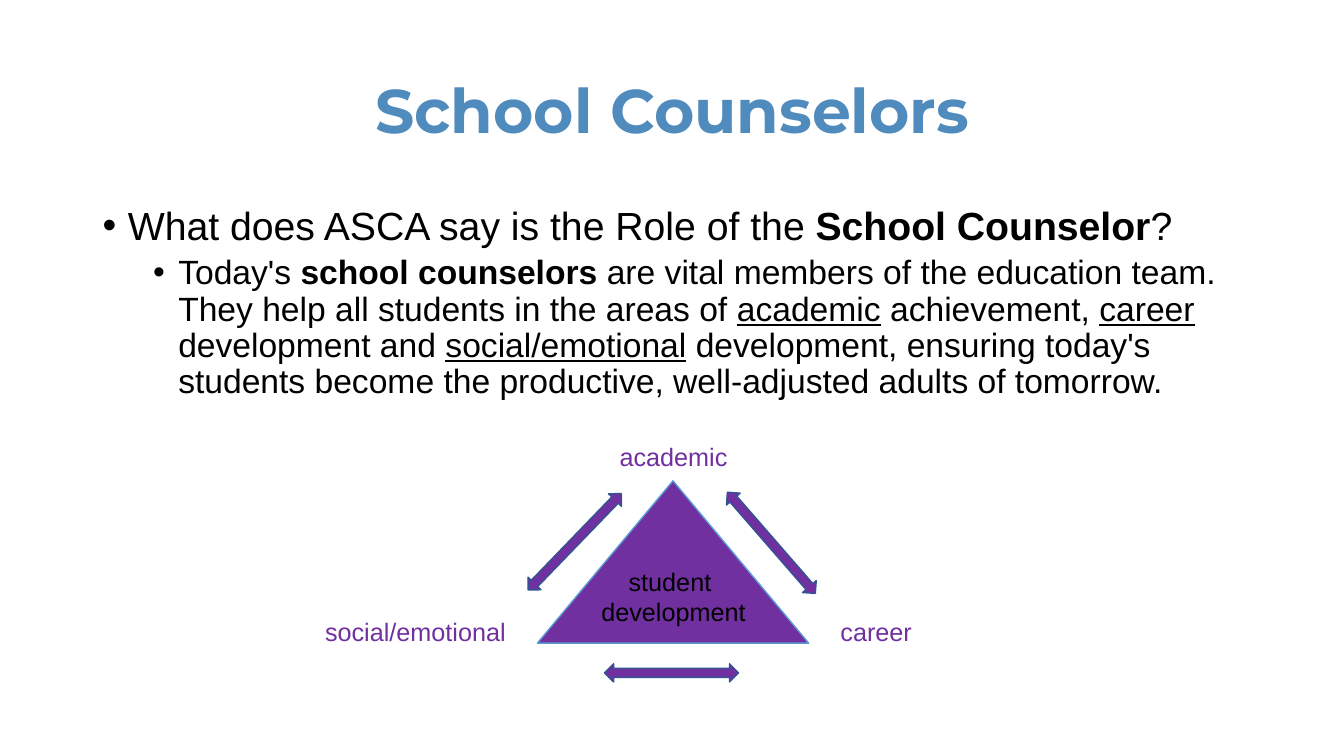
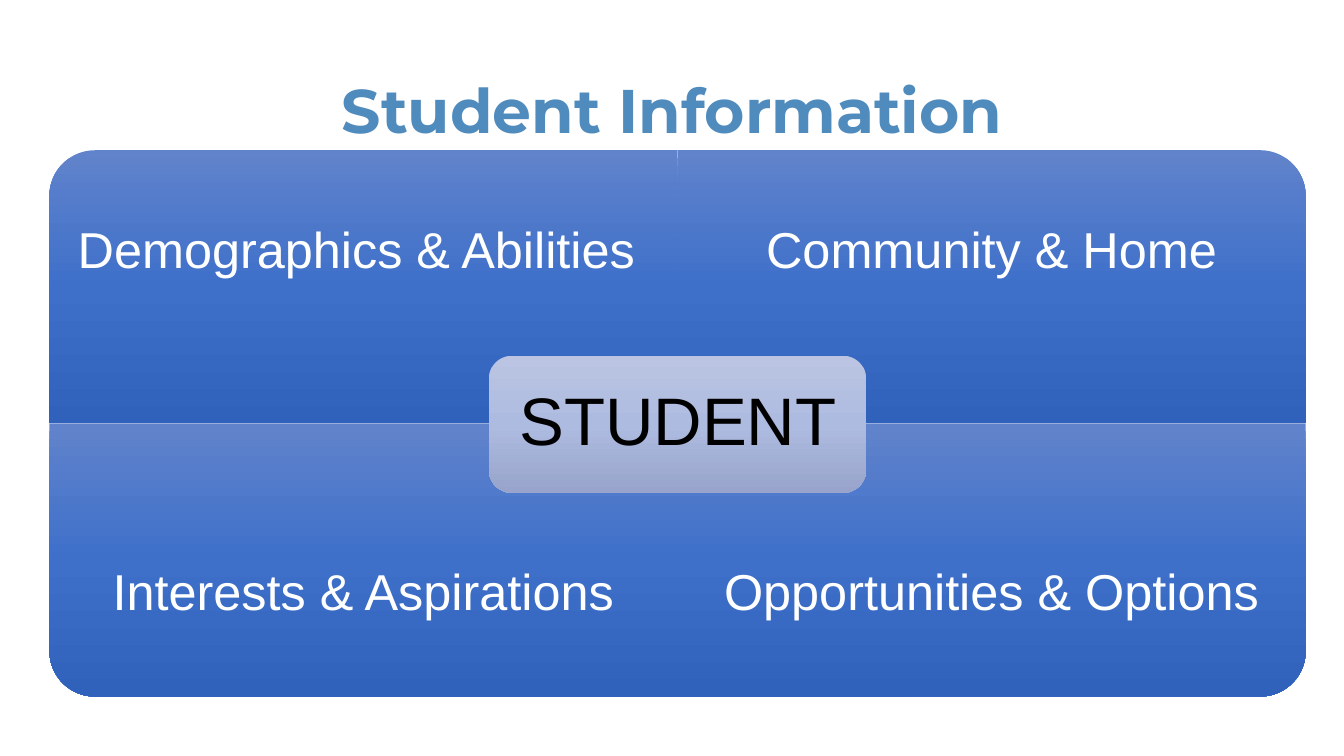
"""Build two slides on school counselors and student information."""
from dataclasses import dataclass

from lxml.etree import SubElement
from pptx import Presentation
from pptx.dml.color import RGBColor
from pptx.enum.shapes import MSO_SHAPE
from pptx.enum.text import MSO_ANCHOR, PP_ALIGN
from pptx.oxml.ns import qn
from pptx.util import Inches, Pt


@dataclass(frozen=True)
class Theme:
    """Hold the colours, fonts and type sizes."""
    head: str = "508BBD"
    ink: str = "000000"
    light: str = "FFFFFF"
    purple: str = "7030A0"
    edge: str = "5B9BD5"
    rim: str = "325491"
    tile: tuple = ("6183CB", "3E70CA", "3062BB")
    core: tuple = ("BBC5E3", "AEBBE0", "98A4CB")
    face: str = "Arial"
    title: str = "Montserrat"
    big: int = 44
    lead: int = 28
    point: int = 24
    note: int = 18
    label: int = 36
    hub: int = 48


class Deck:
    """Draw styled elements on the current slide."""

    def __init__(self, theme):
        """Start an empty wide deck."""
        self.theme = theme
        self.show = Presentation()
        self.show.slide_width, self.show.slide_height = Inches(13.33), Inches(7.5)
        self.slide = None

    def page(self, title):
        """Add a slide with its title."""
        self.slide = self.show.slides.add_slide(self.show.slide_layouts[6])
        look = {"size": self.theme.big, "name": self.theme.title,
                "color": self.theme.head, "bold": True}
        self.text((0.92, 0.4, 11.5, 1.45), [title], look, MSO_ANCHOR.MIDDLE, space=0.9)

    def style(self, font, look):
        """Set font values from a dict."""
        for key, value in look.items():
            if key == "color":
                font.color.rgb = RGBColor.from_string(value)
            else:
                setattr(font, key, Pt(value) if key == "size" else value)

    def text(self, box, lines, look, anchor=MSO_ANCHOR.TOP, align=PP_ALIGN.CENTER,
             space=1.0, inset=None):
        """Add a text box with one paragraph per line."""
        frame = self.slide.shapes.add_textbox(*map(Inches, box)).text_frame
        form = {"word_wrap": True, "vertical_anchor": anchor}
        if inset:
            sides = ("left", "top", "right", "bottom")
            form.update({f"margin_{side}": Inches(inset) for side in sides})
        for key, value in form.items():
            setattr(frame, key, value)
        for i, line in enumerate(lines):
            para = frame.add_paragraph() if i else frame.paragraphs[0]
            para.alignment, para.line_spacing = align, space
            run = para.add_run()
            run.text = line
            self.style(run.font, {"name": self.theme.face, **look})
        return frame

    def points(self, box, items):
        """Add a bullet list of (level, size, runs)."""
        frame = self.text(box, [], {})
        for i, (level, size, runs) in enumerate(items):
            para = frame.add_paragraph() if i else frame.paragraphs[0]
            form = {"level": level, "line_spacing": 0.9, "alignment": PP_ALIGN.LEFT,
                    "space_before": Pt(5 if i else 0)}
            for key, value in form.items():
                setattr(para, key, value)
            props = para._p.get_or_add_pPr()
            props.set("marL", str(Inches(0.25 + 0.5 * level)))
            props.set("indent", str(Inches(-0.25)))
            SubElement(props, qn("a:buFont"), typeface=self.theme.face)
            SubElement(props, qn("a:buChar"), char="•")
            base = {"name": self.theme.face, "size": size, "color": self.theme.ink}
            for words, mark in runs:
                run = para.add_run()
                run.text = words
                self.style(run.font, {**base, **mark})

    def shape(self, kind, box, fill, line=None, turn=0):
        """Add a preset shape with a flat or graded fill."""
        item = self.slide.shapes.add_shape(kind, *map(Inches, box))
        item.shadow.inherit = False
        item.rotation = turn
        if isinstance(fill, str):
            item.fill.solid()
            item.fill.fore_color.rgb = RGBColor.from_string(fill)
        else:
            self.grade(item, fill, turn)
        if line:
            item.line.color.rgb = RGBColor.from_string(line)
            item.line.width = Pt(1)
        else:
            item.line.fill.background()

    def grade(self, item, tones, turn):
        """Fill a shape from top to bottom, whatever its turn."""
        item.fill.gradient()
        item.fill.gradient_angle = (270 + turn) % 360
        stops = item.element.spPr.find(".//" + qn("a:gsLst"))
        for stop in list(stops):
            stops.remove(stop)
        for i, tone in enumerate(tones):
            stop = SubElement(stops, qn("a:gs"), pos=str(i * 50000))
            SubElement(stop, qn("a:srgbClr"), val=tone)


def role(deck):
    """Draw the role of the counselor."""
    theme = deck.theme
    deck.page("School Counselors")
    bold, under = {"bold": True}, {"underline": True}
    deck.points((0.92, 2, 11.5, 2.2), [
        (0, theme.lead, [("What does ASCA say is the Role of the ", {}),
                         ("School Counselor", bold), ("?", {})]),
        (1, theme.point, [
            ("Today's ", {}), ("school counselors", bold),
            (" are vital members of the education team. They help all students "
             "in the areas of ", {}),
            ("academic", under), (" achievement, ", {}), ("career", under),
            (" development and ", {}), ("social/emotional", under),
            (" development, ensuring today's students become the productive, "
             "well-adjusted adults of tomorrow.", {})])])
    deck.shape(MSO_SHAPE.ISOSCELES_TRIANGLE, (5.33, 4.77, 2.69, 1.61),
               theme.purple, theme.edge)
    for left, top, lines, color in (
            (5.18, 4.33, ["academic"], theme.purple),
            (7.19, 6.07, ["career"], theme.purple),
            (2.62, 6.07, ["social/emotional"], theme.purple),
            (5.18, 5.57, ["student ", "development"], theme.ink)):
        deck.text((left, top, 3, 0.1 + 0.3 * len(lines)), lines,
                  {"size": theme.note, "color": color})
    for left, top, turn in ((5.61, 4.71, 44), (7.56, 4.72, 139), (6.57, 6.01, 90)):
        deck.shape(MSO_SHAPE.UP_DOWN_ARROW, (left, top, 0.18, 1.33),
                   theme.purple, theme.rim, turn)


def facts(deck):
    """Draw the four fields around the student."""
    theme = deck.theme
    deck.page("Student Information")
    left, top, wide, high = 0.49, 1.49, 6.23, 2.71
    for i, (label, turn) in enumerate((
            ("Demographics & Abilities", 270), ("Community & Home", 0),
            ("Interests & Aspirations", 180), ("Opportunities & Options", 90))):
        row, col = divmod(i, 2)
        x, y = left + col * wide, top + row * high
        box = (x, y, wide, high)
        if turn % 180:
            shift = (wide - high) / 2
            box = (x + shift, y - shift, high, wide)
        deck.shape(MSO_SHAPE.ROUND_1_RECTANGLE, box, theme.tile, turn=turn)
        deck.text((x, y + row * 0.68, wide, 2.03), [label],
                  {"size": theme.label, "color": theme.light}, MSO_ANCHOR.MIDDLE,
                  PP_ALIGN.CENTER if i else PP_ALIGN.LEFT, 0.9, 0.28)
    deck.shape(MSO_SHAPE.ROUNDED_RECTANGLE, (4.85, 3.53, 3.74, 1.36), theme.core)
    deck.text((4.92, 3.59, 3.61, 1.22), ["STUDENT"],
              {"size": theme.hub, "color": theme.ink}, MSO_ANCHOR.MIDDLE,
              space=0.9, inset=0.2)


def main():
    """Build and save the deck."""
    deck = Deck(Theme())
    role(deck)
    facts(deck)
    deck.show.save("out.pptx")


if __name__ == "__main__":
    main()
